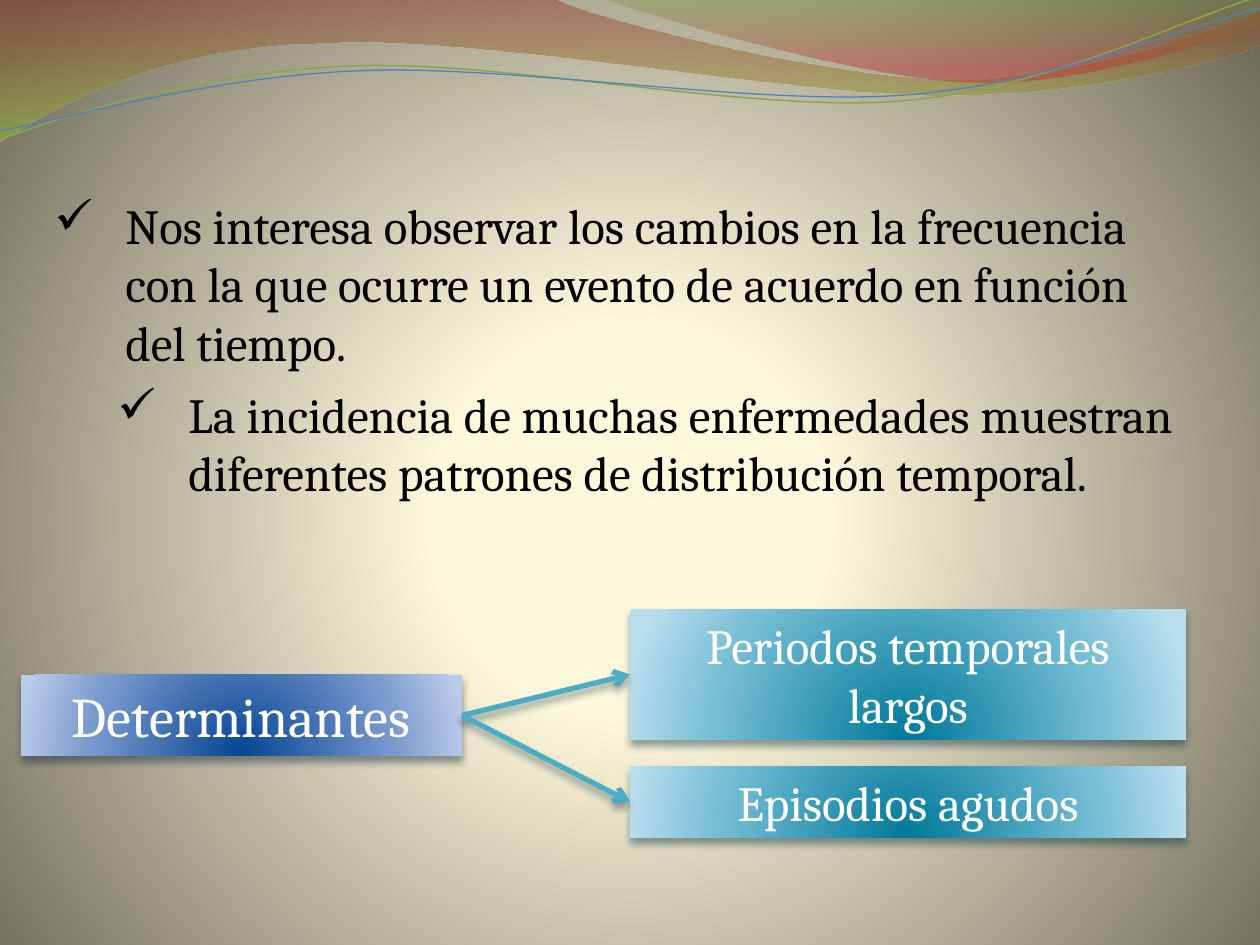
from dataclasses import dataclass

from lxml import etree
from pptx import Presentation
from pptx import util as u
from pptx.dml.color import RGBColor
from pptx.enum import shapes, text
from pptx.oxml.ns import qn

SCALE = 914400 / 126


@dataclass(frozen=True)
class Theme:
    font: str = "Cambria"
    bullet_font: str = "OpenSymbol"
    body_size: int = 28
    heading_size: int = 32
    dark: str = "000000"
    light: str = "FFFFFF"
    arrow: str = "4BACC6"
    green_line: str = "89A54F"
    blue_line: str = "4F81BD"
    blue_shadow: str = "1B2D43"
    teal_shadow: str = "193D47"
    # Gradient stops: position, colour, opacity in percent
    backdrop: tuple = ((0, "FFF9DA", 100), (25, "FDF7DB", 100), (100, "6F6C5C", 100))
    wide_ribbon: tuple = ((0, "973330", 45), (100, "95C238", 55))
    right_ribbon: tuple = ((0, "769537", 30), (80, "BE3330", 45))
    blue: tuple = ((0, "064493", 100), (68, "799ACE", 100), (100, "BACAE9", 100))
    teal: tuple = ((0, "00799B", 100), (68, "76BED5", 100), (100, "B9DEEE", 100))


THEME = Theme()
BACKDROP_FOCUS = (10, 110, 10, 100)
BOX_FOCUS = (50, 130, 50, -30)
WAVE_ROTATION = 357.3

# Each segment holds one point for a straight line or three for a Bézier curve
WIDE_RIBBON = ((0, 0), [
    [(554, -1)],
    [(600, 21), (837, 79), (955, 79)],
    [(1075, 79), (1207, 33), (1260, 11)],
    [(1261, 45)],
    [(1239, 55), (1096, 96), (940, 95)],
    [(784, 95), (481, 35), (324, 43)],
    [(163, 45), (58, 105), (-1, 142)],
    [(0, 0)],
])
RIGHT_RIBBON = ((604, -1), [
    [(641, 14), (859, 78), (969, 82)],
    [(1079, 87), (1211, 40), (1260, 26)],
    [(1260, 0)],
    [(604, -1)],
])
GREEN_WAVE = ((-2, 110), [
    [(59, 90), (199, 52), (350, 53)],
    [(499, 53), (745, 118), (896, 114)],
    [(1049, 109), (1184, 45), (1260, 27)],
])
BLUE_WAVE = ((-2, 101), [
    [(57, 94), (207, 57), (357, 58)],
    [(509, 58), (750, 112), (902, 108)],
    [(1052, 104), (1188, 52), (1262, 38)],
])


def px(value):
    return u.Emu(round(value * SCALE))


def add_xml(parent, tag, **attributes):
    values = {name: str(value) for name, value in attributes.items()}
    return etree.SubElement(parent, qn(tag), values)


def add_color(parent, color, opacity):
    element = add_xml(parent, "a:srgbClr", val=color)
    if opacity < 100:
        add_xml(element, "a:alpha", val=opacity * 1000)


def set_gradient(fill, element, stops, focus=None):
    """Fill radially around the focus rectangle, or downwards without one."""
    fill.gradient()
    gradient = next(element.iter(qn("a:gradFill")))
    for child in list(gradient):
        gradient.remove(child)
    stop_list = add_xml(gradient, "a:gsLst")
    for position, color, opacity in stops:
        add_color(add_xml(stop_list, "a:gs", pos=position * 1000), color, opacity)
    if focus:
        circle = add_xml(gradient, "a:path", path="circle")
        sides = {side: value * 1000 for side, value in zip("ltrb", focus)}
        add_xml(circle, "a:fillToRect", **sides)
    else:
        add_xml(gradient, "a:lin", ang=90 * 60000, scaled=1)


def add_shadow(shape, color):
    effects = add_xml(shape._element.spPr, "a:effectLst")
    shadow = add_xml(effects, "a:outerShdw", blurRad=u.Pt(4.5), dist=u.Pt(3),
                     dir=90 * 60000, algn="ctr", rotWithShape=0)
    add_color(shadow, color, 48)


def add_outline(slide, outline, close):
    """Draw the segment ends as a freeform, then bend its lines into curves."""
    start, segments = outline
    builder = slide.shapes.build_freeform(*map(px, start))
    builder.add_line_segments([tuple(map(px, segment[-1])) for segment in segments],
                              close=close)
    shape = builder.convert_to_shape()
    shape.shadow.inherit = False
    lines = list(shape._element.iter(qn("a:lnTo")))
    for line, segment in zip(lines, segments):
        if len(segment) == 3:
            line.tag = qn("a:cubicBezTo")
            line.remove(line[0])
            for x, y in segment:
                add_xml(line, "a:pt", x=px(x) - shape.left, y=px(y) - shape.top)
    return shape


def add_ribbon(slide, outline, stops):
    shape = add_outline(slide, outline, close=True)
    shape.line.fill.background()
    set_gradient(shape.fill, shape._element, stops)


def add_wave(slide, outline, color, width):
    shape = add_outline(slide, outline, close=False)
    shape.rotation = WAVE_ROTATION
    shape.fill.background()
    shape.line.color.rgb = RGBColor.from_string(color)
    shape.line.width = u.Pt(width)


def write_text(shape, content, *, size=THEME.body_size, color=THEME.dark,
               align=text.PP_ALIGN.LEFT, anchor=text.MSO_ANCHOR.TOP, bullet=None, indent=0):
    frame = shape.text_frame
    frame.word_wrap = True
    frame.auto_size = text.MSO_AUTO_SIZE.SHAPE_TO_FIT_TEXT
    frame.vertical_anchor = anchor
    paragraph = frame.paragraphs[0]
    paragraph.alignment = align
    run = paragraph.add_run()
    run.text = content
    run.font.name = THEME.font
    run.font.size = u.Pt(size)
    run.font.color.rgb = RGBColor.from_string(color)
    if bullet:
        properties = paragraph._p.get_or_add_pPr()
        properties.set("marL", str(px(indent)))
        properties.set("indent", str(-px(indent)))
        add_xml(properties, "a:buFont", typeface=THEME.bullet_font)
        add_xml(properties, "a:buChar", char=bullet)


def add_bullet_text(slide, box, content):
    shape = slide.shapes.add_textbox(*map(px, box))
    write_text(shape, content, bullet="✓", indent=71)


def add_box(slide, box, content, stops, shadow, size=THEME.body_size):
    shape = slide.shapes.add_shape(shapes.MSO_SHAPE.RECTANGLE, *map(px, box))
    set_gradient(shape.fill, shape._element, stops, BOX_FOCUS)
    shape.line.fill.background()
    add_shadow(shape, shadow)
    write_text(shape, content, size=size, color=THEME.light,
               align=text.PP_ALIGN.CENTER)
    return shape


def add_arrow(slide, source, target):
    arrow = slide.shapes.add_connector(shapes.MSO_CONNECTOR.STRAIGHT, 0, 0, 0, 0)
    arrow.begin_connect(source, 3)
    arrow.end_connect(target, 1)
    arrow.line.color.rgb = RGBColor.from_string(THEME.arrow)
    arrow.line.width = u.Pt(3)
    add_xml(arrow._element.spPr.find(qn("a:ln")), "a:tailEnd", type="arrow")
    add_shadow(arrow, THEME.teal_shadow)


def main():
    presentation = Presentation()
    presentation.slide_width, presentation.slide_height = px(1260), px(945)
    slide = presentation.slides.add_slide(presentation.slide_layouts[6])
    set_gradient(slide.background.fill, slide._element, THEME.backdrop, BACKDROP_FOCUS)

    add_ribbon(slide, WIDE_RIBBON, THEME.wide_ribbon)
    add_ribbon(slide, RIGHT_RIBBON, THEME.right_ribbon)
    add_wave(slide, GREEN_WAVE, THEME.green_line, 0.85)
    add_wave(slide, BLUE_WAVE, THEME.blue_line, 0.75)

    add_bullet_text(slide, (42, 189, 1155, 190),
                    "Nos interesa observar los cambios en la frecuencia con la que ocurre "
                    "un evento de acuerdo en función del tiempo.")
    add_bullet_text(slide, (105, 378, 1102, 190),
                    "La incidencia de muchas enfermedades muestran diferentes patrones "
                    "de distribución temporal.")

    determinants = add_box(slide, (21, 675, 441, 81), "Determinantes",
                           THEME.blue, THEME.blue_shadow, THEME.heading_size)
    outcomes = [add_box(slide, (630, top, 556, height), content,
                        THEME.teal, THEME.teal_shadow)
                for top, height, content in ((609, 131, "Periodos temporales largos"),
                                             (766, 72, "Episodios agudos"))]
    for outcome in outcomes:
        add_arrow(slide, determinants, outcome)

    presentation.save("out.pptx")


if __name__ == "__main__":
    main()
